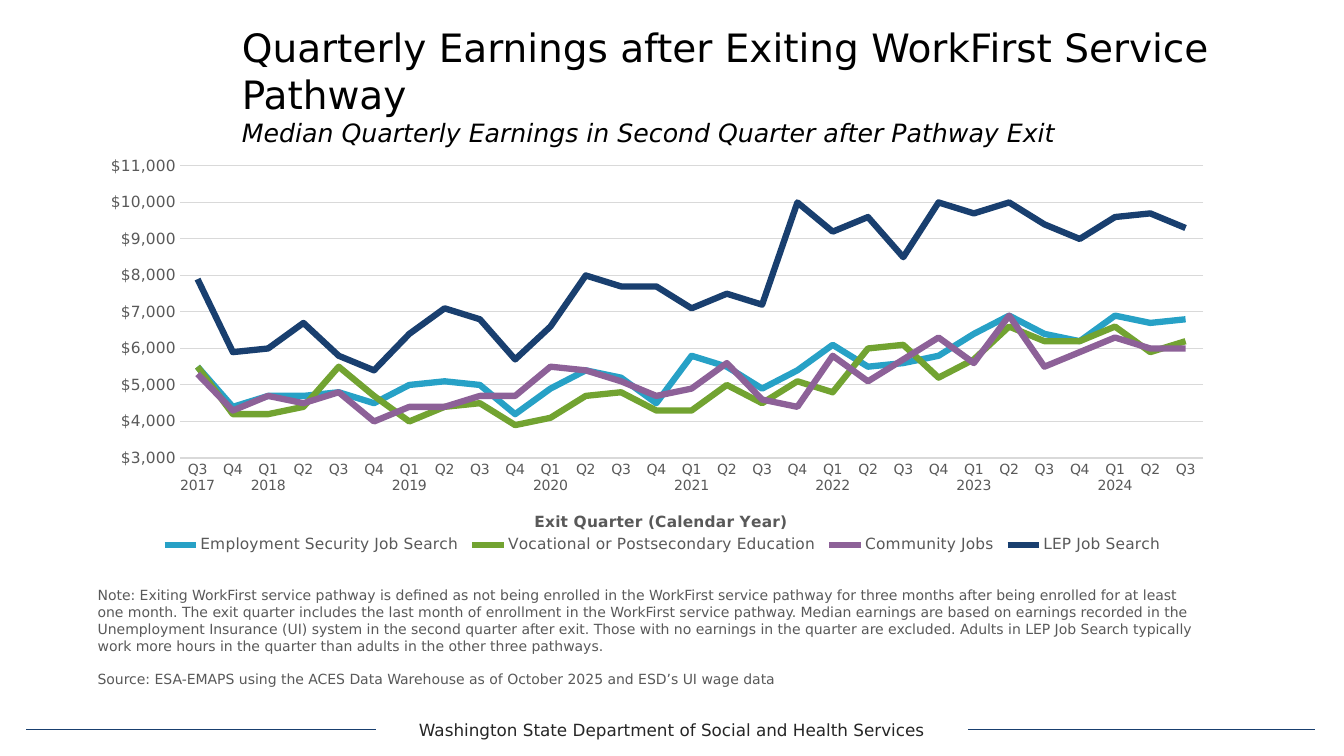
"""Build the slide on quarterly earnings after leaving a WorkFirst pathway."""
from dataclasses import dataclass

from lxml import etree
from pptx import Presentation
from pptx import util as u
from pptx.chart import data
from pptx.dml import color as dml
from pptx.enum import chart as ch
from pptx.enum import shapes, text
from pptx.oxml import ns

FACE = "DejaVu Sans"
BLACK, GREY, PALE, NAVY, INK = "000000", "595959", "D9D9D9", "193F6F", "262626"


@dataclass
class Path:
    name: str
    hue: str
    vals: list[int]


@dataclass
class Rule:
    left: float
    right: float


@dataclass
class Spot:
    x: float
    y: float
    w: float = 0
    h: float = 0


PATHS = [
    Path("Employment Security Job Search", "27A1C6",
         [55, 44, 47, 47, 48, 45, 50, 51, 50, 42, 49, 54, 52, 45, 58,
          55, 49, 54, 61, 55, 56, 58, 64, 69, 64, 62, 69, 67, 68]),
    Path("Vocational or Postsecondary Education", "72A331",
         [55, 42, 42, 44, 55, 47, 40, 44, 45, 39, 41, 47, 48, 43, 43,
          50, 45, 51, 48, 60, 61, 52, 57, 66, 62, 62, 66, 59, 62]),
    Path("Community Jobs", "8D6198",
         [53, 43, 47, 45, 48, 40, 44, 44, 47, 47, 55, 54, 51, 47, 49,
          56, 46, 44, 58, 51, 57, 63, 56, 69, 55, 59, 63, 60, 60]),
    Path("LEP Job Search", NAVY,
         [79, 59, 60, 67, 58, 54, 64, 71, 68, 57, 66, 80, 77, 77, 71,
          75, 72, 100, 92, 96, 85, 100, 97, 100, 94, 90, 96, 97, 93]),
]
RULES = [Rule(0.26, 3.73), Rule(9.6, 13.04)]
NOTES = [
    "Note: Exiting WorkFirst service pathway is defined as not being enrolled in "
    "the WorkFirst service pathway for three months after being enrolled for at "
    "least one month. The exit quarter includes the last month of enrollment in "
    "the WorkFirst service pathway. Median earnings are based on earnings recorded "
    "in the Unemployment Insurance (UI) system in the second quarter after exit. "
    "Those with no earnings in the quarter are excluded. Adults in LEP Job Search "
    "typically work more hours in the quarter than adults in the other three "
    "pathways.",
    "Source: ESA-EMAPS using the ACES Data Warehouse as of October 2025 and "
    "ESD’s UI wage data",
]


def tint(code: str) -> dml.RGBColor:
    return dml.RGBColor.from_string(code)


def style(font, size: float, hue: str, bold: bool = False, slant: bool = False) -> None:
    font.name, font.size, font.bold, font.italic = FACE, u.Pt(size), bold, slant
    font.color.rgb = tint(hue)


def add_run(para, words: str, size: float, hue: str, **look) -> None:
    run = para.add_run()
    run.text = words
    style(run.font, size, hue, **look)


def stroke(line, hue: str, width: float) -> None:
    line.color.rgb = tint(hue)
    line.width = u.Pt(width)


def add_box(slide, left: float, top: float, wide: float, high: float):
    box = slide.shapes.add_textbox(*map(u.Inches, (left, top, wide, high)))
    frame = box.text_frame
    frame.word_wrap = True
    frame.auto_size = text.MSO_AUTO_SIZE.SHAPE_TO_FIT_TEXT
    return frame


def add_rule(slide, rule: Rule) -> None:
    line = slide.shapes.add_connector(
        shapes.MSO_CONNECTOR.STRAIGHT, u.Inches(rule.left), u.Inches(7.24),
        u.Inches(rule.right), u.Inches(7.24))
    stroke(line.line, NAVY, 0.75)
    etree.SubElement(line._element.spPr, ns.qn("a:effectLst"))


def pin(part, index: int, spot: Spot, inner: bool = False) -> None:
    for old in part.findall(ns.qn("c:layout")):
        part.remove(old)
    lay = etree.Element(ns.qn("c:layout"))
    hand = etree.SubElement(lay, ns.qn("c:manualLayout"))
    pairs = [("layoutTarget", "inner")] if inner else []
    pairs += [("xMode", "edge"), ("yMode", "edge"), ("x", spot.x), ("y", spot.y)]
    if spot.w:
        pairs += [("w", spot.w), ("h", spot.h)]
    for tag, val in pairs:
        etree.SubElement(hand, ns.qn(f"c:{tag}")).set("val", str(val))
    part.insert(index, lay)


def quarter(step: int) -> str:
    year, part = divmod(step + 2, 4)
    mark = f"Q{part + 1}"
    return f"{mark}\n{2017 + year}" if part == 0 or step == 0 else mark


def add_title(slide) -> None:
    head = slide.shapes.title
    head.left, head.top, head.width, head.height = map(u.Inches, (2.3, 0.12, 10.33, 1.45))
    frame = head.text_frame
    frame.word_wrap = True
    frame.auto_size = text.MSO_AUTO_SIZE.NONE
    frame.vertical_anchor = text.MSO_ANCHOR.MIDDLE
    para = frame.paragraphs[0]
    para.alignment = text.PP_ALIGN.LEFT
    add_run(para, "Quarterly Earnings after Exiting WorkFirst Service Pathway", 27.9, BLACK)
    para.add_line_break()
    add_run(para, "Median Quarterly Earnings in Second Quarter after Pathway Exit",
            18, BLACK, slant=True)


def add_graph(slide) -> None:
    feed = data.CategoryChartData(number_format='"$"#,##0')
    feed.categories = [quarter(step) for step in range(len(PATHS[0].vals))]
    for path in PATHS:
        feed.add_series(path.name, [val * 100 for val in path.vals])
    graph = slide.shapes.add_chart(
        ch.XL_CHART_TYPE.LINE, *map(u.Inches, (0.87, 1.47, 11.29, 4.3)), feed).chart
    style(graph.font, 10, BLACK)
    graph.has_title = False
    for line, path in zip(graph.plots[0].series, PATHS):
        line.smooth = False
        line.marker.style = ch.XL_MARKER_STYLE.NONE
        stroke(line.format.line, path.hue, 4.5)
    graph.plots[0].vary_by_categories = False

    base, side = graph.category_axis, graph.value_axis
    for axis, size in ((base, 10), (side, 11)):
        axis.major_tick_mark = axis.minor_tick_mark = ch.XL_TICK_MARK.NONE
        style(axis.tick_labels.font, size, GREY)
    stroke(base.format.line, PALE, 0.75)
    side.format.line.fill.background()
    side.minimum_scale, side.maximum_scale, side.major_unit = 3000, 11000, 1000
    side.tick_labels.number_format = '"$"#,##0'
    side.tick_labels.number_format_is_linked = False
    stroke(side.major_gridlines.format.line, PALE, 0.75)

    base.has_title = True
    add_run(base.axis_title.text_frame.paragraphs[0],
            "Exit Quarter (Calendar Year)", 11, GREY, bold=True)
    graph.has_legend = True
    key = graph.legend
    key.position = ch.XL_LEGEND_POSITION.BOTTOM
    key.include_in_layout = False
    style(key.font, 11, GREY)
    pin(graph._chartSpace.chart.plotArea, 0, Spot(0.081, 0.041, 0.899, 0.674), True)
    pin(base.axis_title._element, 1, Spot(0.39, 0.83))
    pin(key._element, 1, Spot(0.06, 0.88, 0.89, 0.07))


def main() -> None:
    deck = Presentation()
    deck.slide_width, deck.slide_height = u.Inches(13.33), u.Inches(7.5)
    slide = deck.slides.add_slide(deck.slide_layouts[5])
    foot = add_box(slide, 3.73, 7.09, 5.87, 0.3).paragraphs[0]
    foot.alignment = text.PP_ALIGN.CENTER
    add_run(foot, "Washington State Department of Social and Health Services", 12, INK)
    for rule in RULES:
        add_rule(slide, rule)
    add_title(slide)
    add_graph(slide)
    frame = add_box(slide, 0.87, 5.77, 11.16, 1.11)
    for index, note in enumerate(NOTES):
        para = frame.add_paragraph() if index else frame.paragraphs[0]
        if index:
            para.space_before = u.Pt(12)
        add_run(para, note, 10, GREY)
    deck.save("out.pptx")


if __name__ == "__main__":
    main()
